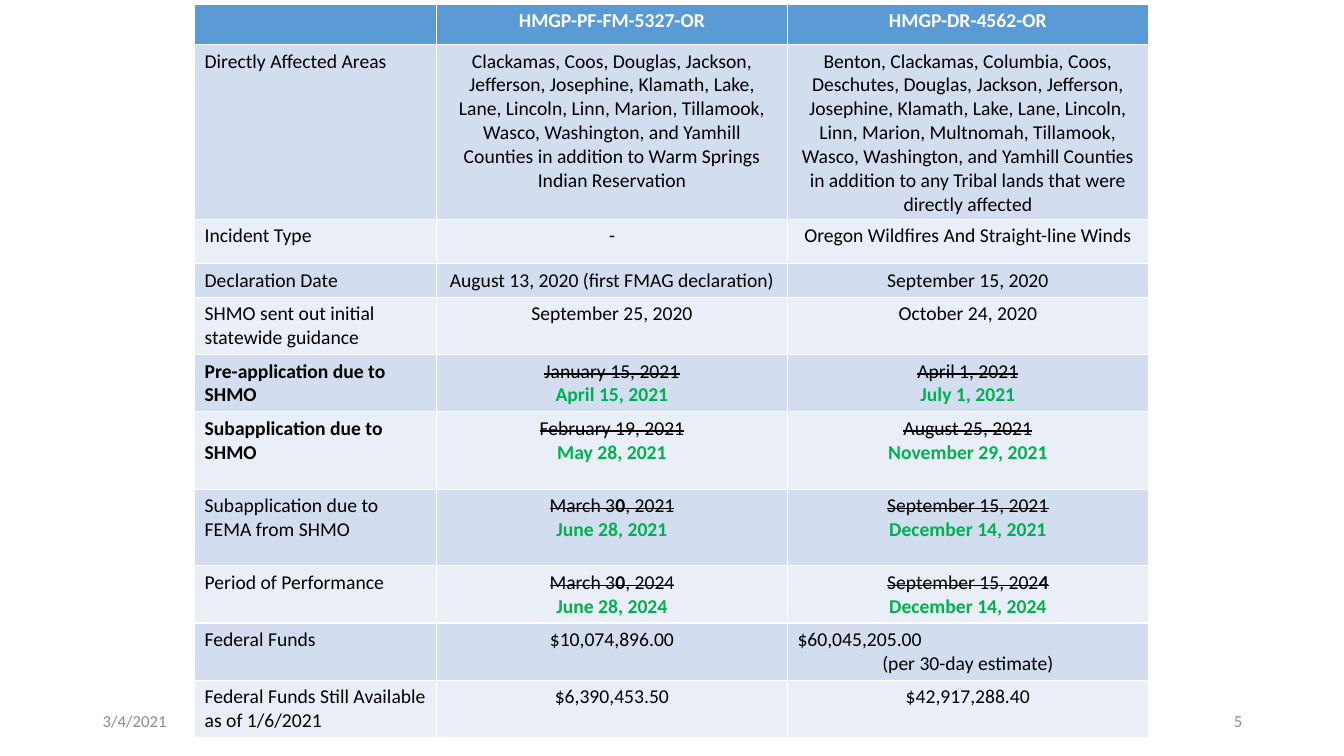
from dataclasses import dataclass
from pptx import Presentation
from pptx.dml.color import RGBColor
from pptx.enum.text import MSO_ANCHOR, PP_ALIGN
from pptx.util import Inches, Pt

LEFT, MID, RIGHT = PP_ALIGN.LEFT, PP_ALIGN.CENTER, PP_ALIGN.RIGHT
CENTER = MSO_ANCHOR.MIDDLE


@dataclass(frozen=True)
class Theme:
    font: str = "Calibri"
    body: int = 14
    small: int = 12
    head: str = "5B9BD5"
    bands: tuple = ("D2DEEF", "EAEFF7")
    white: str = "FFFFFF"
    ink: str = "000000"
    green: str = "00B050"
    gray: str = "8C8C8C"


THEME = Theme()
WIDTHS = (2.4, 3.48, 3.58)
HEIGHTS = (0.36, 1.45, 0.44, 0.3, 0.52, 0.49, 0.77, 0.76, 0.55, 0.53, 0.56)
HEADS = ("", "HMGP-PF-FM-5327-OR", "HMGP-DR-4562-OR")


def line(text, align=MID, color=THEME.ink, bold=False, strike=False):
    return text, align, color, bold, strike


def label(text, bold=False):
    return [line(text, LEFT, bold=bold)]


def plain(text):
    return [line(text)]


def moved(old, new):
    return [line(old, strike=True), line(new, color=THEME.green, bold=True)]


ROWS = [
    (label("Directly Affected Areas"),
     plain("Clackamas, Coos, Douglas, Jackson, Jefferson, Josephine, Klamath, "
           "Lake, Lane, Lincoln, Linn, Marion, Tillamook, Wasco, Washington, "
           "and Yamhill Counties in addition to Warm Springs Indian Reservation"),
     plain("Benton, Clackamas, Columbia, Coos, Deschutes, Douglas, Jackson, "
           "Jefferson, Josephine, Klamath, Lake, Lane, Lincoln, Linn, Marion, "
           "Multnomah, Tillamook, Wasco, Washington, and Yamhill Counties in "
           "addition to any Tribal lands that were directly affected")),
    (label("Incident Type"), plain("-"),
     plain("Oregon Wildfires And Straight-line Winds")),
    (label("Declaration Date"),
     plain("August 13, 2020 (first FMAG declaration)"),
     plain("September 15, 2020")),
    (label("SHMO sent out initial statewide guidance"),
     plain("September 25, 2020"), plain("October 24, 2020")),
    (label("Pre-application due to SHMO", True),
     moved("January 15, 2021", "April 15, 2021"),
     moved("April 1, 2021", "July 1, 2021")),
    (label("Subapplication due to SHMO", True),
     moved("February 19, 2021", "May 28, 2021"),
     moved("August 25, 2021", "November 29, 2021")),
    (label("Subapplication due to FEMA from SHMO"),
     moved("March 3*0*, 2021", "June 28, 2021"),
     moved("September 15, 2021", "December 14, 2021")),
    (label("Period of Performance"),
     moved("March 3*0*, 2024", "June 28, 2024"),
     moved("September 15, 202*4*", "December 14, 2024")),
    (label("Federal Funds"), plain("$10,074,896.00"),
     [line("$60,045,205.00", LEFT), line("(per 30-day estimate)")]),
    (label("Federal Funds Still Available as of 1/6/2021"),
     plain("$6,390,453.50"), plain("$42,917,288.40")),
]


def style(font, size, color, bold=False):
    font.name = THEME.font
    font.size = Pt(size)
    font.bold = bold
    font.color.rgb = RGBColor.from_string(color)


def write(frame, lines):
    for i, (text, align, color, bold, strike) in enumerate(lines):
        para = frame.paragraphs[0] if i == 0 else frame.add_paragraph()
        para.alignment = align
        for j, part in enumerate(text.split("*")):
            if not part:
                continue
            run = para.add_run()
            run.text = part
            style(run.font, THEME.body, color, bold or j % 2 == 1)
            if strike:
                run._r.get_or_add_rPr().set("strike", "sngStrike")


def add_dates(slide, left, top, width, height):
    heads = [[line(text, color=THEME.white, bold=True)] for text in HEADS]
    rows = [heads] + ROWS
    table = slide.shapes.add_table(
        len(rows), len(WIDTHS), Inches(left), Inches(top),
        Inches(width), Inches(height)).table
    for col, size in zip(table.columns, WIDTHS):
        col.width = Inches(size * width / sum(WIDTHS))
    for row, size in zip(table.rows, HEIGHTS):
        row.height = Inches(size)
    for r, cells in enumerate(rows):
        fill = THEME.bands[(r - 1) % 2] if r else THEME.head
        for c, lines in enumerate(cells):
            cell = table.cell(r, c)
            cell.fill.solid()
            cell.fill.fore_color.rgb = RGBColor.from_string(fill)
            write(cell.text_frame, lines)


def add_note(slide, text, align, left, top, width, height):
    box = slide.shapes.add_textbox(
        Inches(left), Inches(top), Inches(width), Inches(height))
    frame = box.text_frame
    frame.word_wrap = True
    frame.vertical_anchor = CENTER
    frame.text = text
    para = frame.paragraphs[0]
    para.alignment = align
    style(para.runs[0].font, THEME.small, THEME.gray)


def add_foot(slide, left, top, width, height):
    size = 3
    add_note(slide, "3/4/2021", LEFT, left, top, size, height)
    add_note(slide, "5", RIGHT, left + width - size, top, size, height)


def main():
    deck = Presentation()
    deck.slide_width = Inches(13.33)
    deck.slide_height = Inches(7.5)
    slide = deck.slides.add_slide(deck.slide_layouts[6])
    add_foot(slide, 0.92, 6.95, 11.5, 0.4)
    add_dates(slide, 1.93, 0.04, 9.46, sum(HEIGHTS))
    deck.save("out.pptx")


if __name__ == "__main__":
    main()
